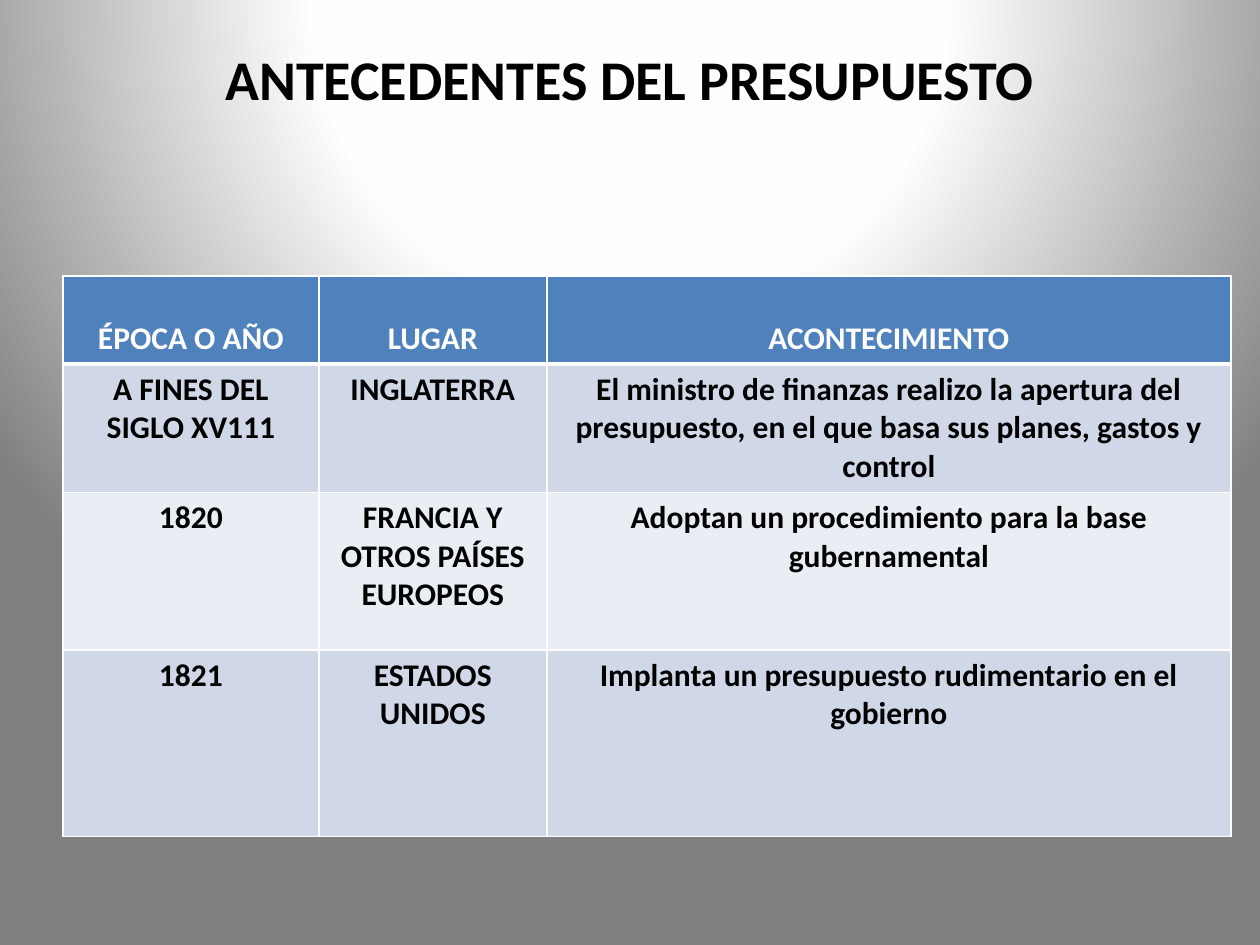
"""Build a slide with a table of milestones in the history of the budget."""
from dataclasses import dataclass

from lxml.etree import SubElement
from pptx import Presentation
from pptx.dml.color import RGBColor
from pptx.enum.text import MSO_ANCHOR, PP_ALIGN
from pptx.oxml import parse_xml
from pptx.oxml.ns import nsdecls, qn
from pptx.slide import Slide
from pptx.table import _Cell
from pptx.text.text import TextFrame
from pptx.util import Inches, Pt


@dataclass(frozen=True)
class Theme:
    font: str = "Calibri"
    title_size: int = 32
    table_size: int = 18
    text: str = "000000"
    header_text: str = "FFFFFF"
    header_fill: str = "4F81BD"
    band_fills: tuple[str, str] = ("D0D8E8", "E9EDF4")
    border: str = "FFFFFF"
    border_width: int = 1
    header_rule_width: int = 3
    background_stops: tuple[tuple[int, str], ...] = (
        (0, "FFFFFF"), (40, "FEFEFE"), (100, "7F7F7F"))


@dataclass(frozen=True)
class Milestone:
    period: str
    place: str
    event: str
    height: float


THEME = Theme()
COLUMN_WIDTHS = (2.03, 1.81, 5.43)
HEADER = Milestone("ÉPOCA O AÑO", "LUGAR", "ACONTECIMIENTO", 0.7)
MILESTONES = (
    Milestone("A FINES DEL SIGLO XV111", "INGLATERRA",
              "El ministro de finanzas realizo la apertura del presupuesto, "
              "en el que basa sus planes, gastos y control", 1.02),
    Milestone("1820", "FRANCIA Y OTROS PAÍSES EUROPEOS",
              "Adoptan un procedimiento para la base gubernamental", 1.25),
    Milestone("1821", "ESTADOS UNIDOS",
              "Implanta un presupuesto rudimentario en el gobierno", 1.48),
)


def write_text(frame: TextFrame, text: str, *, size: int, color: str) -> None:
    frame.word_wrap = True
    paragraph = frame.paragraphs[0]
    paragraph.alignment = PP_ALIGN.CENTER
    run = paragraph.add_run()
    run.text = text
    run.font.name = THEME.font
    run.font.size = Pt(size)
    run.font.bold = True
    run.font.color.rgb = RGBColor.from_string(color)


def paint_background(slide: Slide) -> None:
    stops = "".join(
        f'<a:gs pos="{position * 1000}"><a:srgbClr val="{color}"/></a:gs>'
        for position, color in THEME.background_stops)
    background = parse_xml(
        f'<p:bg {nsdecls("p", "a")}><p:bgPr><a:gradFill rotWithShape="1">'
        f'<a:gsLst>{stops}</a:gsLst><a:path path="circle">'
        '<a:fillToRect l="50000" t="-80000" r="50000" b="180000"/></a:path>'
        '</a:gradFill><a:effectLst/></p:bgPr></p:bg>')
    slide.element.cSld.insert(0, background)


def draw_borders(cell: _Cell, bottom_width: int) -> None:
    properties = cell._tc.get_or_add_tcPr()
    for side in "LRTB":
        width = bottom_width if side == "B" else THEME.border_width
        line = SubElement(properties, qn(f"a:ln{side}"), w=str(Pt(width)))
        fill = SubElement(line, qn("a:solidFill"))
        SubElement(fill, qn("a:srgbClr"), val=THEME.border)


def format_cell(cell: _Cell, text: str, *, fill: str, color: str,
                anchor: MSO_ANCHOR, bottom_width: int) -> None:
    draw_borders(cell, bottom_width)
    cell.fill.solid()
    cell.fill.fore_color.rgb = RGBColor.from_string(fill)
    cell.vertical_anchor = anchor
    write_text(cell.text_frame, text, size=THEME.table_size, color=color)


def add_title(slide: Slide, text: str) -> None:
    box = slide.shapes.add_textbox(Inches(0.5), Inches(0.3), Inches(9), Inches(1.25))
    write_text(box.text_frame, text, size=THEME.title_size, color=THEME.text)


def add_milestone_table(slide: Slide) -> None:
    rows = (HEADER, *MILESTONES)
    table = slide.shapes.add_table(
        len(rows), len(COLUMN_WIDTHS), Inches(0.5), Inches(2.19),
        Inches(sum(COLUMN_WIDTHS)), Inches(sum(row.height for row in rows))).table
    for column, width in zip(table.columns, COLUMN_WIDTHS):
        column.width = Inches(width)
    for index, milestone in enumerate(rows):
        table.rows[index].height = Inches(milestone.height)
        is_header = index == 0
        texts = (milestone.period, milestone.place, milestone.event)
        for cell, text in zip(table.rows[index].cells, texts):
            format_cell(
                cell, text,
                fill=THEME.header_fill if is_header else THEME.band_fills[(index - 1) % 2],
                color=THEME.header_text if is_header else THEME.text,
                anchor=MSO_ANCHOR.BOTTOM if is_header else MSO_ANCHOR.TOP,
                bottom_width=THEME.header_rule_width if is_header else THEME.border_width)


def main() -> None:
    presentation = Presentation()
    presentation.slide_width = Inches(10)
    presentation.slide_height = Inches(7.5)
    slide = presentation.slides.add_slide(presentation.slide_layouts[6])
    paint_background(slide)
    add_title(slide, "ANTECEDENTES DEL PRESUPUESTO")
    add_milestone_table(slide)
    presentation.save("out.pptx")


if __name__ == "__main__":
    main()
